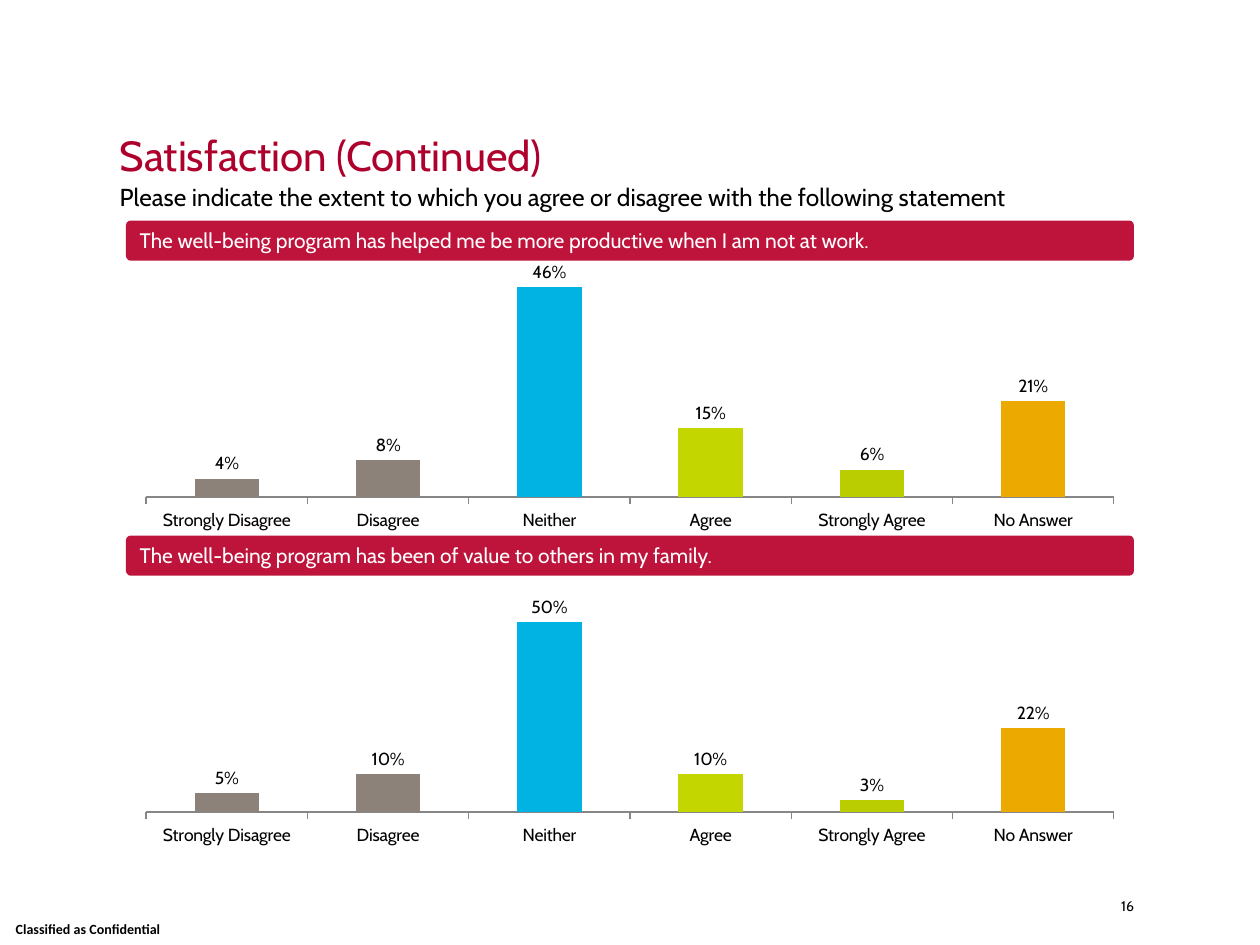
import pptx
import pptx.chart.data
import pptx.dml.color
import pptx.enum.chart
import pptx.enum.shapes
import pptx.enum.text
import pptx.oxml
import pptx.oxml.ns
import pptx.util
from dataclasses import dataclass

Pt = pptx.util.Pt
ALIGN = pptx.enum.text.PP_ALIGN
ANCHOR = pptx.enum.text.MSO_ANCHOR


@dataclass(frozen=True)
class Theme:
    font: str = "Cabin"
    footer_font: str = "Calibri"
    title_size: int = 24
    prompt_size: int = 14
    banner_size: int = 12
    chart_size: int = 10
    footer_size: int = 8
    black: str = "000000"
    white: str = "FFFFFF"
    heading: str = "AE002C"
    banner: str = "BE143C"
    axis: str = "868686"
    answers: tuple = ("8D827A", "8D827A", "00B3E3", "C3D600", "B9CD00", "ECAA00")


THEME = Theme()
ANSWERS = ("Strongly Disagree", "Disagree", "Neither", "Agree", "Strongly Agree", "No Answer")

# Statement, share of each answer, top of the value axis
STATEMENTS = (
    ("The well-being program has helped me be more productive when I am not at work.",
     (0.04, 0.08, 0.46, 0.15, 0.06, 0.21), 0.5),
    ("The well-being program has been of value to others in my family.",
     (0.05, 0.10, 0.50, 0.10, 0.03, 0.22), 0.6),
)
PANEL_LEFT, PANEL_TOP, PANEL_WIDTH, PANEL_STEP = 72, 126, 576, 180
BANNER_HEIGHT = 23
PLOT_AREA = {"x": 0.02, "y": 0.03, "w": 0.96, "h": 0.83}


def color(value):
    return pptx.dml.color.RGBColor.from_string(value)


def apply(target, values):
    for name, value in values.items():
        setattr(target, name, value)


def style_font(font, size, shade, name=THEME.font, bold=False):
    apply(font, {"name": name, "size": Pt(size), "bold": bold})
    font.color.rgb = color(shade)


def write(frame, text, size, shade, name=THEME.font, bold=False, paragraph=None):
    para = frame.paragraphs[0]
    apply(para, {"alignment": ALIGN.LEFT, **(paragraph or {})})
    span = para.add_run()
    span.text = text
    style_font(span.font, size, shade, name, bold)


def add_text(page, place, text, size, shade, anchor=ANCHOR.TOP, **style):
    box = page.shapes.add_textbox(*map(Pt, place))
    apply(box.text_frame, {
        "word_wrap": True, "vertical_anchor": anchor,
        "margin_left": 0, "margin_right": 0, "margin_top": 0, "margin_bottom": 0,
    })
    write(box.text_frame, text, size, shade, **style)


def add_banner(page, top, text):
    kind = pptx.enum.shapes.MSO_SHAPE.ROUNDED_RECTANGLE
    banner = page.shapes.add_shape(
        kind, Pt(PANEL_LEFT), Pt(top), Pt(PANEL_WIDTH), Pt(BANNER_HEIGHT))
    banner.shadow.inherit = False
    banner.adjustments[0] = 0.12
    banner.fill.solid()
    banner.fill.fore_color.rgb = color(THEME.banner)
    banner.line.fill.background()
    apply(banner.text_frame, {"word_wrap": True, "vertical_anchor": ANCHOR.MIDDLE})
    write(banner.text_frame, text, THEME.banner_size, THEME.white,
          paragraph={"space_before": Pt(8), "space_after": Pt(9)})


def fix_plot_area(chart):
    """Place the inner plot area by fractions of the chart frame."""
    plot_area = chart._chartSpace.chart.plotArea
    for old in plot_area.findall(pptx.oxml.ns.qn("c:layout")):
        plot_area.remove(old)
    sizes = "".join(f'<c:{key} val="{value}"/>' for key, value in PLOT_AREA.items())
    plot_area.insert(0, pptx.oxml.parse_xml(
        f'<c:layout {pptx.oxml.ns.nsdecls("c")}><c:manualLayout>'
        '<c:layoutTarget val="inner"/><c:xMode val="edge"/><c:yMode val="edge"/>'
        f'{sizes}</c:manualLayout></c:layout>'))


def add_answer_chart(page, top, shares, maximum):
    data = pptx.chart.data.CategoryChartData(number_format="0%")
    data.categories = ANSWERS
    data.add_series("Series 1", shares)
    chart = page.shapes.add_chart(
        pptx.enum.chart.XL_CHART_TYPE.COLUMN_CLUSTERED, Pt(PANEL_LEFT), Pt(top),
        Pt(PANEL_WIDTH), Pt(PANEL_STEP - BANNER_HEIGHT), data).chart
    apply(chart, {"has_legend": False, "has_title": False})
    style_font(chart.font, THEME.chart_size, THEME.black)

    # Axes
    apply(chart.value_axis, {
        "visible": False, "has_major_gridlines": False,
        "minimum_scale": 0, "maximum_scale": maximum,
    })
    chart.value_axis.tick_labels.number_format = "0%"
    chart.value_axis.tick_labels.number_format_is_linked = False
    chart.category_axis.major_tick_mark = pptx.enum.chart.XL_TICK_MARK.OUTSIDE
    chart.category_axis.format.line.color.rgb = color(THEME.axis)
    chart.category_axis.format.line.width = Pt(0.75)

    # Columns and their labels
    plot = chart.plots[0]
    apply(plot, {"gap_width": 150, "vary_by_categories": False, "has_data_labels": True})
    apply(plot.data_labels, {
        "show_value": True, "number_format": "0%", "number_format_is_linked": False,
        "position": pptx.enum.chart.XL_LABEL_POSITION.OUTSIDE_END,
    })
    style_font(plot.data_labels.font, THEME.chart_size, THEME.black)
    series = plot.series[0]
    series.format.fill.solid()
    series.format.fill.fore_color.rgb = color(THEME.banner)
    for index, shade in enumerate(THEME.answers):
        fill = series.points[index].format.fill
        fill.solid()
        fill.fore_color.rgb = color(shade)
    fix_plot_area(chart)


def main():
    deck = pptx.Presentation()
    apply(deck, {"slide_width": Pt(720), "slide_height": Pt(540)})
    page = deck.slides.add_slide(deck.slide_layouts[6])

    # Heading and question
    add_text(page, (68.4, 49, 576, 54), "Satisfaction (Continued)", THEME.title_size,
             THEME.heading, anchor=ANCHOR.BOTTOM, paragraph={"line_spacing": 0.9})
    add_text(page, (68.4, 100.8, 608.4, 21.6),
             "Please indicate the extent to which you agree or disagree"
             " with the following statement",
             THEME.prompt_size, THEME.black,
             paragraph={"line_spacing": 1.2, "space_before": Pt(9), "space_after": Pt(9)})

    # One banner and chart per statement
    for index, (statement, shares, maximum) in enumerate(STATEMENTS):
        top = PANEL_TOP + index * PANEL_STEP
        add_banner(page, top, statement)
        add_answer_chart(page, top + BANNER_HEIGHT, shares, maximum)

    # Footer
    add_text(page, (0, 522, 100.8, 18), "Classified as Confidential", THEME.footer_size,
             THEME.black, anchor=ANCHOR.MIDDLE, name=THEME.footer_font, bold=True,
             paragraph={"alignment": ALIGN.CENTER})
    add_text(page, (612.7, 512.6, 35.3, 27.4), "16", THEME.footer_size, THEME.black,
             paragraph={"alignment": ALIGN.RIGHT})

    deck.save("out.pptx")


if __name__ == "__main__":
    main()
